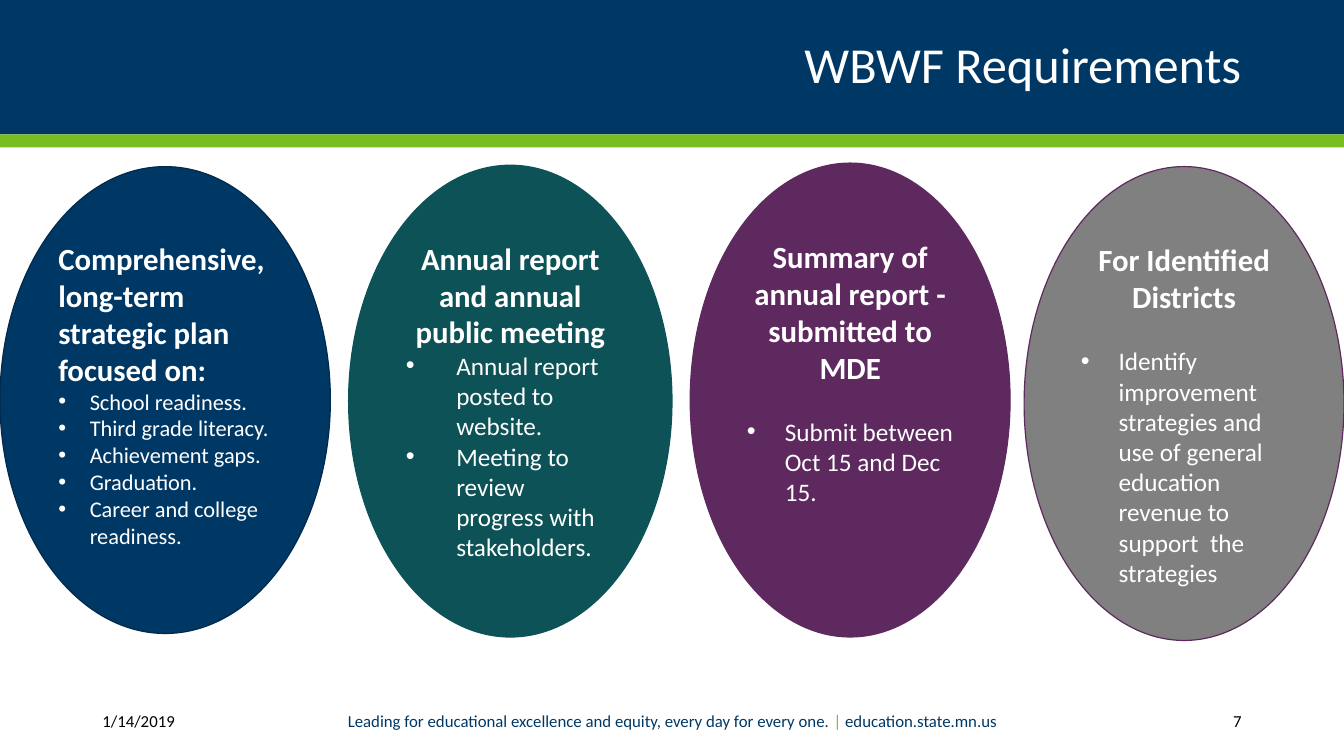
from lxml import etree
from pptx import Presentation
from pptx.dml.color import RGBColor
from pptx.enum import shapes, text
from pptx.oxml.ns import qn
from pptx.util import Pt

NAVY = RGBColor(0x00, 0x38, 0x65)
INK = RGBColor(0x00, 0x29, 0x4B)
GREEN = RGBColor(0x78, 0xBE, 0x21)
TEAL = RGBColor(0x0D, 0x52, 0x57)
PLUM = RGBColor(0x5D, 0x29, 0x5F)
GRAY = RGBColor(0x80, 0x80, 0x80)
WHITE = RGBColor(0xFF, 0xFF, 0xFF)
BLACK = RGBColor(0x00, 0x00, 0x00)

LEFT, MID, RIGHT = text.PP_ALIGN.LEFT, text.PP_ALIGN.CENTER, text.PP_ALIGN.RIGHT
RECT, OVAL = shapes.MSO_SHAPE.RECTANGLE, shapes.MSO_SHAPE.OVAL

# box in points, fill, line, heading alignment, heading,
# bullet size, bullet indent, gap under heading, bullets
GOALS = [
    ((0, 119, 236, 333.5), NAVY, INK, LEFT,
     "Comprehensive, long-term strategic plan focused on:", 16, 22.5, 0,
     ["School readiness.", "Third grade literacy.", "Achievement gaps.",
      "Graduation.", "Career and college readiness."]),
    ((249, 118, 231, 337), TEAL, TEAL, MID,
     "Annual report and annual public meeting", 18, 36, 0,
     ["Annual report posted to website.",
      "Meeting to review progress with stakeholders."]),
    ((493, 116.5, 228.5, 338.5), PLUM, PLUM, MID,
     "Summary of annual report - submitted to MDE", 18, 27, 22,
     ["Submit between Oct 15 and Dec 15."]),
    ((731.5, 119, 228.5, 338.5), GRAY, PLUM, MID,
     "For Identified Districts", 18, 27, 22,
     ["Identify improvement strategies and use of general education "
      "revenue to support  the strategies"]),
]


def add_run(para, words, size, color, bold=False):
    run = para.add_run()
    run.text = words
    font = run.font
    font.name, font.size, font.bold = "Calibri", Pt(size), bold
    font.color.rgb = color


def add_form(slide, kind, box, fill, line=None):
    form = slide.shapes.add_shape(kind, *map(Pt, box))
    form.shadow.inherit = False
    form.fill.solid()
    form.fill.fore_color.rgb = fill
    if line is None:
        form.line.fill.background()
    else:
        form.line.color.rgb = line
        form.line.width = Pt(0.85)
    return form


def set_bullet(para, indent):
    props = para._p.get_or_add_pPr()
    props.set("marL", str(Pt(indent)))
    props.set("indent", str(-Pt(indent)))
    etree.SubElement(props, qn("a:buFont")).set("typeface", "Arial")
    etree.SubElement(props, qn("a:buChar")).set("char", "•")


def add_goal(slide, box, fill, line, align, head, size, indent, gap, items):
    frame = add_form(slide, OVAL, box, fill, line).text_frame
    frame.word_wrap = True
    frame.vertical_anchor = text.MSO_ANCHOR.TOP
    para = frame.paragraphs[0]
    para.alignment = align
    add_run(para, head, 22, WHITE, True)
    for i, item in enumerate(items):
        para = frame.add_paragraph()
        para.alignment = LEFT
        para.space_before = Pt(0 if i else gap)
        set_bullet(para, indent)
        add_run(para, item, size, WHITE)


def set_title(slide, words):
    title = slide.shapes.title
    title.left, title.top, title.width, title.height = map(Pt, (66, 12, 828, 72))
    # Bring the title in front of the band
    title.element.getparent().append(title.element)
    frame = title.text_frame
    frame.word_wrap = True
    frame.auto_size = text.MSO_AUTO_SIZE.NONE
    frame.vertical_anchor = text.MSO_ANCHOR.MIDDLE
    para = frame.paragraphs[0]
    para.alignment, para.line_spacing = RIGHT, 0.9
    add_run(para, words, 36, WHITE)


def add_foot(slide, left, width, align, parts):
    frame = slide.shapes.add_textbox(Pt(left), Pt(500.5), Pt(width), Pt(28.75)).text_frame
    frame.word_wrap = True
    frame.vertical_anchor = text.MSO_ANCHOR.MIDDLE
    para = frame.paragraphs[0]
    para.alignment = align
    for words, color in parts:
        add_run(para, words, 12, color)


def main():
    deck = Presentation()
    deck.slide_width, deck.slide_height = Pt(960), Pt(540)
    slide = deck.slides.add_slide(deck.slide_layouts[5])

    # Header band and title
    add_form(slide, RECT, (0, 0, 960, 96), NAVY)
    add_form(slide, RECT, (0, 96, 960, 9.25), GREEN)
    set_title(slide, "WBWF Requirements")

    # Footer
    add_foot(slide, 66, 107, LEFT, [("1/14/2019", BLACK)])
    add_foot(slide, 779, 115, RIGHT, [("7", BLACK)])
    add_foot(slide, 227.5, 505.5, MID, [
        ("Leading for educational excellence and equity, every day for every one. ", NAVY),
        ("| ", GREEN),
        ("education.state.mn.us", NAVY),
    ])

    # Requirement ovals
    for goal in GOALS:
        add_goal(slide, *goal)

    deck.save("out.pptx")


if __name__ == "__main__":
    main()
